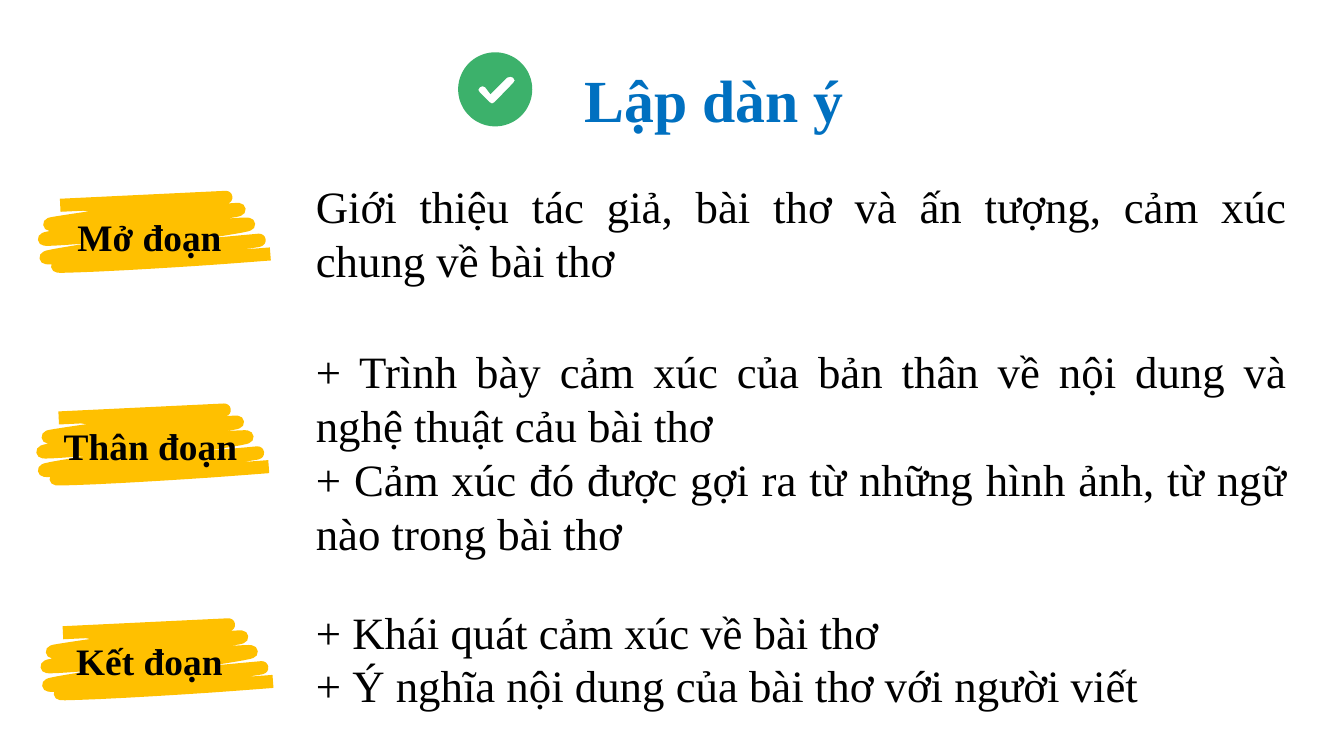
from dataclasses import dataclass
from math import cos, pi, sin

from pptx import Presentation
from pptx.dml.color import RGBColor
from pptx.enum.text import MSO_AUTO_SIZE, PP_ALIGN
from pptx.util import Cm, Pt

CENTER = PP_ALIGN.CENTER
JUSTIFY = PP_ALIGN.JUSTIFY
GROW = MSO_AUTO_SIZE.SHAPE_TO_FIT_TEXT

GREEN = RGBColor(0x3C, 0xB1, 0x6B)
BLUE = RGBColor(0x00, 0x70, 0xC0)
AMBER = RGBColor(0xFF, 0xC0, 0x00)
BLACK = RGBColor(0x00, 0x00, 0x00)

Point = tuple[float, float]

TITLE_FONT = {"name": "Times New Roman", "size": Pt(32), "bold": True}
LABEL_FONT = {"name": "Times New Roman", "size": Pt(20), "bold": True}
BODY_FONT = {"name": "Times New Roman", "size": Pt(24), "bold": False}

# All coordinates are in centimetres.
BADGE_CENTER = (9.36, 1.69)
BADGE_RADIUS = 0.7
TICK = [
    (0.29, -0.24), (0.34, -0.22), (0.37, -0.17), (0.34, -0.12), (-0.01, 0.24),
    (-0.06, 0.27), (-0.11, 0.24), (-0.29, 0.06), (-0.32, 0.01), (-0.29, -0.04),
    (-0.24, -0.06), (-0.19, -0.04), (-0.09, 0.09), (0.22, -0.22),
]

BRUSH_START = (0.3, 0.15)
BRUSH_TOP_RIGHT = (3.43, 0.0)
BRUSH_CURVES = [
    ((3.38, 0.05), (0.08, 0.48), (0.10, 0.51)),
    ((0.15, 0.56), (3.68, 0.20), (3.68, 0.23)),
    ((3.66, 0.28), (-0.03, 0.74), (0.0, 0.79)),
    ((0.05, 0.84), (3.86, 0.46), (3.86, 0.51)),
    ((3.86, 0.56), (0.0, 1.09), (0.03, 1.14)),
    ((0.05, 1.19), (4.04, 0.81), (4.06, 0.81)),
    ((4.11, 0.84), (0.23, 1.24), (0.25, 1.30)),
    ((0.28, 1.32), (2.16, 1.24), (4.27, 1.07)),
]
CURVE_STEPS = 16


@dataclass(frozen=True)
class Section:
    label: str
    label_at: Point
    brush_at: Point
    body_top: float
    body_height: float
    lines: list[str]


SECTIONS = [
    Section("Mở đoạn", (0.69, 3.71), (0.84, 3.73), 3.25, 2.31, [
        "Giới thiệu tác giả, bài thơ và ấn tượng, cảm xúc chung về bài thơ",
    ]),
    Section("Thân đoạn", (0.71, 7.67), (0.81, 7.75), 6.38, 4.37, [
        "+ Trình bày cảm xúc của bản thân về nội dung và nghệ thuật cảu bài thơ",
        "+ Cảm xúc đó được gợi ra từ những hình ảnh, từ ngữ nào trong bài thơ",
    ]),
    Section("Kết đoạn", (0.69, 11.73), (0.89, 11.81), 11.3, 2.31, [
        "+ Khái quát cảm xúc về bài thơ",
        "+ Ý nghĩa nội dung của bài thơ với người viết",
    ]),
]


def curve_points(start: Point, first: Point, second: Point, end: Point) -> list[Point]:
    """Sample a cubic Bézier curve, leaving out its start."""
    points = []
    for step in range(1, CURVE_STEPS + 1):
        t = step / CURVE_STEPS
        u = 1 - t
        weights = (u**3, 3 * u * u * t, 3 * u * t * t, t**3)
        controls = (start, first, second, end)
        points.append((sum(w * p[0] for w, p in zip(weights, controls)),
                       sum(w * p[1] for w, p in zip(weights, controls))))
    return points


def brush_outline() -> list[Point]:
    outline = [BRUSH_START, BRUSH_TOP_RIGHT]
    for curve in BRUSH_CURVES:
        outline += curve_points(outline[-1], *curve)
    return outline


def circle_outline(radius: float, sides: int = 96) -> list[Point]:
    angles = (2 * pi * side / sides for side in range(sides))
    return [(radius * cos(angle), radius * sin(angle)) for angle in angles]


def add_outline(slide, origin: Point, contours: list[list[Point]],
                color: RGBColor, closed: bool, line_width: float = 0) -> None:
    """Draw contours around an origin as one filled freeform."""
    placed = [[(Cm(origin[0] + x), Cm(origin[1] + y)) for x, y in contour]
              for contour in contours]
    builder = slide.shapes.build_freeform(*placed[0][0])
    for index, contour in enumerate(placed):
        if index:
            builder.move_to(*contour[0])
        builder.add_line_segments(contour[1:], close=closed)
    outline = builder.convert_to_shape()
    outline.shadow.inherit = False
    outline.fill.solid()
    outline.fill.fore_color.rgb = color
    if line_width:
        outline.line.color.rgb = color
        outline.line.width = Pt(line_width)
    else:
        outline.line.fill.background()


def add_text(slide, at: Point, size: Point, lines: list[str], font: dict,
             color: RGBColor, align: PP_ALIGN, spacing: float = 1.0) -> None:
    box = slide.shapes.add_textbox(*map(Cm, at + size))
    frame = box.text_frame
    frame.word_wrap = True
    frame.auto_size = GROW
    frame.text = "\n".join(lines)
    for paragraph in frame.paragraphs:
        paragraph.alignment = align
        paragraph.line_spacing = spacing
        for run in paragraph.runs:
            for attribute, value in font.items():
                setattr(run.font, attribute, value)
            run.font.color.rgb = color


def add_section(slide, section: Section) -> None:
    add_outline(slide, section.brush_at, [brush_outline()], AMBER,
                closed=False, line_width=7)
    add_text(slide, section.label_at, (4.27, 1.22), [section.label],
             LABEL_FONT, BLACK, CENTER, 1.25)
    add_text(slide, (5.72, section.body_top), (18.85, section.body_height),
             section.lines, BODY_FONT, BLACK, JUSTIFY)


def main() -> None:
    deck = Presentation()
    deck.slide_width, deck.slide_height = Cm(25.4), Cm(14.29)
    slide = deck.slides.add_slide(deck.slide_layouts[6])

    add_outline(slide, BADGE_CENTER, [TICK, circle_outline(BADGE_RADIUS)],
                GREEN, closed=True)
    add_text(slide, (10.8, 0.79), (12.7, 1.75), ["Lập dàn ý"],
             TITLE_FONT, BLUE, JUSTIFY, 1.2)
    for section in SECTIONS:
        add_section(slide, section)

    deck.save("out.pptx")


if __name__ == "__main__":
    main()
